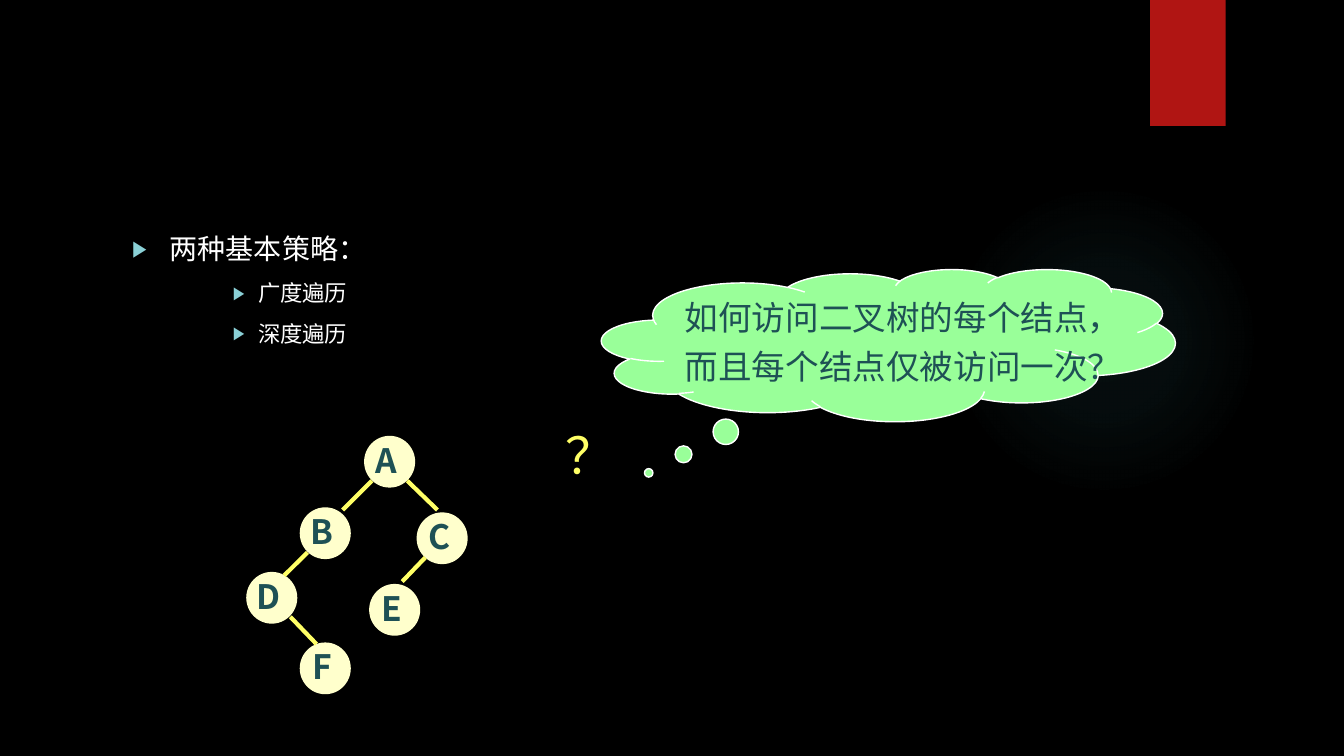
from lxml import etree
from pptx import Presentation
from pptx import util as u
from pptx.dml.color import RGBColor
from pptx.enum import shapes, text
from pptx.oxml.ns import qn

COLORS = {
    "background": "000000", "white": "FFFFFF", "banner": "B01513",
    "glow": "50B9C1", "bullet": "8AD0D6", "cloud": "99FF99",
    "ink": "1E5155", "node": "FFFFCC", "edge": "FFFF66",
}
STRATEGIES = [("两种基本策略：", 0, 20, 27, 27), ("广度遍历", 2, 16, 90, 18), ("深度遍历", 2, 16, 90, 18)]
QUESTION = ["如何访问二叉树的每个结点，", "而且每个结点仅被访问一次？"]
NODES = {
    "A": (260.6, 311.8), "B": (214.6, 362.9), "C": (298.1, 366.5),
    "D": (176.4, 409), "E": (264.2, 417.6), "F": (214.6, 459.4),
}
EDGES = [
    (265.7, 343.4, 244.8, 364.3), (290.9, 343.4, 312.5, 364.3),
    (219.6, 394.6, 203, 411.1), (303.8, 398.2, 287.3, 415.4),
    (207.4, 440.6, 226.1, 460.1),
]


def color(name):
    return RGBColor.from_string(COLORS[name])


class SlideBuilder:
    def __init__(self, presentation):
        self.slide = presentation.slides.add_slide(presentation.slide_layouts[1])
        fill = self.slide.background.fill
        fill.solid()
        fill.fore_color.rgb = color("background")
        title = self.slide.shapes.title
        title.element.getparent().remove(title.element)

    def style(self, paragraph, size, name, font_name, bold=False):
        font = paragraph.font
        font.size, font.name, font.bold = u.Pt(size), font_name, bold
        font.color.rgb = color(name)

    def shape(self, kind, box, fill, line=None):
        shape = self.slide.shapes.add_shape(kind, *map(u.Pt, box))
        shape.shadow.inherit = False
        shape.fill.solid()
        shape.fill.fore_color.rgb = color(fill)
        if line:
            shape.line.color.rgb = color(line)
            shape.line.width = u.Pt(1)
        else:
            shape.line.fill.background()
        return shape

    def glow(self, box):
        shape = self.shape(shapes.MSO_SHAPE.OVAL, box, "glow")
        properties = shape.element.spPr
        gradient = etree.Element(qn("a:gradFill"))
        stops = etree.SubElement(gradient, qn("a:gsLst"))
        for position, alpha in ((0, 7), (36, 6), (69, 0), (100, 0)):
            stop = etree.SubElement(stops, qn("a:gs"), pos=str(position * 1000))
            tint = etree.SubElement(stop, qn("a:srgbClr"), val=COLORS["glow"])
            etree.SubElement(tint, qn("a:alpha"), val=str(alpha * 1000))
        route = etree.SubElement(gradient, qn("a:path"), path="circle")
        etree.SubElement(route, qn("a:fillToRect"), l="50000", t="50000", r="50000", b="50000")
        properties.replace(properties.find(qn("a:solidFill")), gradient)

    def caption(self, shape, lines, size, name, font_name, margins, bold=False, gap=0):
        frame = shape.text_frame
        frame.word_wrap = False
        frame.vertical_anchor = text.MSO_ANCHOR.MIDDLE
        frame.margin_left, frame.margin_top, frame.margin_right, frame.margin_bottom = map(u.Pt, margins)
        for index, line in enumerate(lines):
            paragraph = frame.add_paragraph() if index else frame.paragraphs[0]
            paragraph.text = line
            paragraph.alignment = text.PP_ALIGN.CENTER
            paragraph.space_before = u.Pt(gap if index else 0)
            self.style(paragraph, size, name, font_name, bold)

    def bullets(self, box, items):
        body = self.slide.placeholders[1]
        body.left, body.top, body.width, body.height = map(u.Pt, box)
        frame = body.text_frame
        frame.auto_size = text.MSO_AUTO_SIZE.NONE
        for index, (line, level, size, margin, hanging) in enumerate(items):
            paragraph = frame.add_paragraph() if index else frame.paragraphs[0]
            paragraph.text = line
            paragraph.level = level
            paragraph.space_before = u.Pt(10 if index else 0)
            properties = paragraph._p.get_or_add_pPr()
            properties.set("marL", str(u.Pt(margin)))
            properties.set("indent", str(u.Pt(-hanging)))
            bullet_color = etree.SubElement(properties, qn("a:buClr"))
            etree.SubElement(bullet_color, qn("a:srgbClr"), val=COLORS["bullet"])
            etree.SubElement(properties, qn("a:buSzPct"), val="80000")
            etree.SubElement(properties, qn("a:buChar"), char="▶")
            self.style(paragraph, size, "white", "Quicksand")

    def cloud(self, box, lines):
        shape = self.shape(shapes.MSO_SHAPE.CLOUD_CALLOUT, box, "cloud", "white")
        shape.adjustments[0], shape.adjustments[1] = -0.418, 0.839
        self.caption(shape, lines, 24, "ink", "Times New Roman", (50, 0, 0, 0), gap=6)

    def label(self, box, line):
        shape = self.slide.shapes.add_textbox(*map(u.Pt, box))
        self.caption(shape, [line], 36, "edge", "Noto Sans CJK SC", (7.2, 3.6, 7.2, 3.6))

    def node(self, letter, left, top):
        shape = self.shape(shapes.MSO_SHAPE.OVAL, (left, top, 35.5, 36), "node", "node")
        self.caption(shape, [letter], 24, "ink", "Noto Sans CJK SC", (0, 0, 4.3, 3), bold=True)

    def edge(self, *ends):
        connector = self.slide.shapes.add_connector(shapes.MSO_CONNECTOR.STRAIGHT, *map(u.Pt, ends))
        connector.line.color.rgb = color("edge")
        connector.line.width = u.Pt(3)
        etree.SubElement(connector.element.spPr, qn("a:effectLst"))


def main():
    presentation = Presentation()
    presentation.slide_width, presentation.slide_height = u.Pt(960), u.Pt(540)
    builder = SlideBuilder(presentation)
    builder.glow((677.5, 131.8, 221.8, 221.8))
    builder.shape(shapes.MSO_SHAPE.RECTANGLE, (821.5, 0, 54, 90), "banner")
    builder.bullets((87.1, 162, 704.2, 330.5), STRATEGIES)
    builder.cloud((429.8, 192.2, 409.7, 108.7), QUESTION)
    builder.label((369.4, 301, 104.4, 47.5), "？")
    for letter, (left, top) in NODES.items():
        builder.node(letter, left, top)
    for ends in EDGES:
        builder.edge(*ends)
    presentation.save("out.pptx")


if __name__ == "__main__":
    main()
